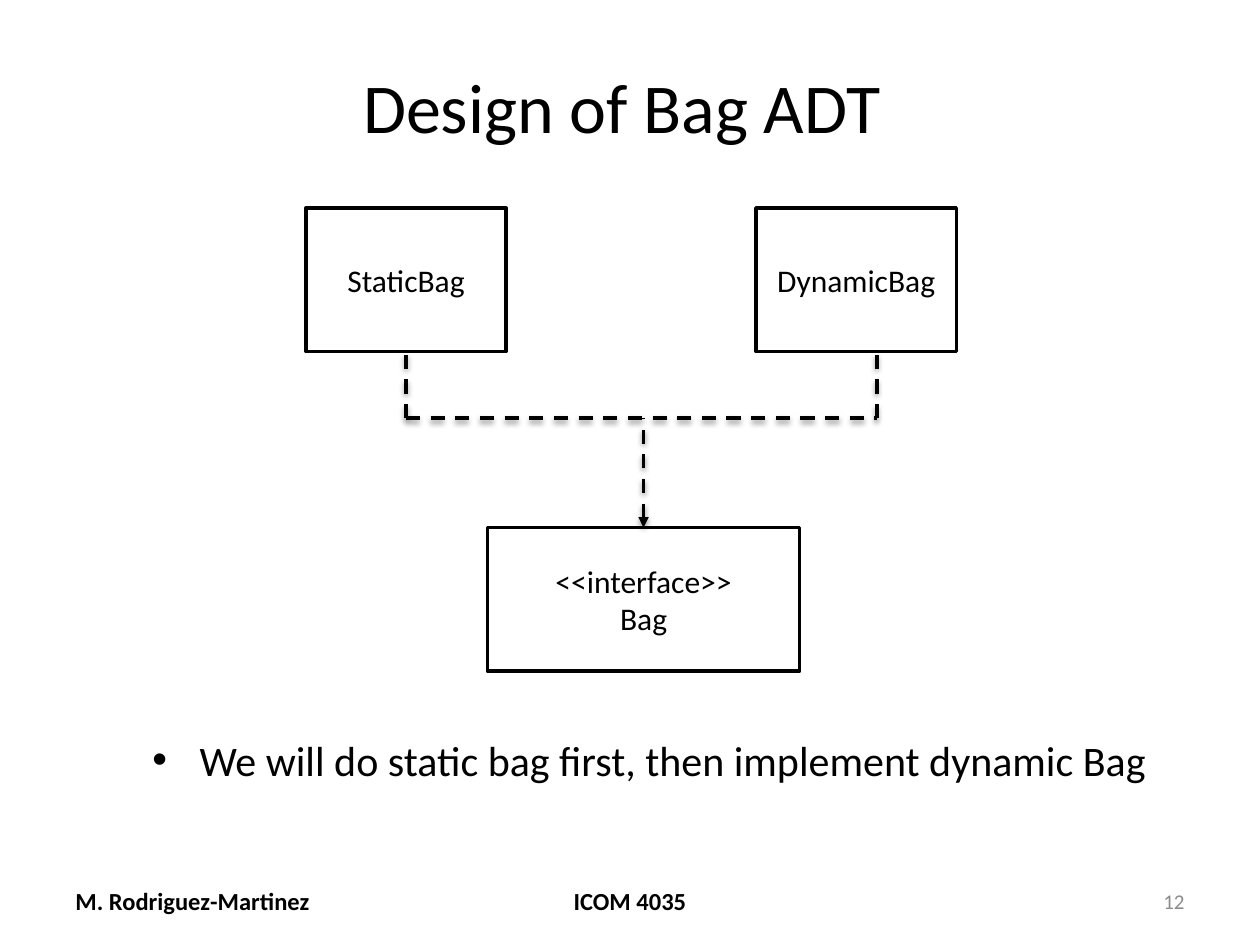
import pptx
import pptx.dml.color
import pptx.enum.dml
import pptx.enum.shapes
import pptx.enum.text
import pptx.oxml
import pptx.oxml.ns
import pptx.util
from pptx.util import Pt

ALIGN = pptx.enum.text.PP_ALIGN
ANCHOR = pptx.enum.text.MSO_ANCHOR
NS = pptx.oxml.ns.nsdecls("a")
SHADOW = (
    f'<a:effectLst {NS}><a:outerShdw blurRad="{Pt(3.1)}" dist="{Pt(1.6)}" '
    'dir="5400000" rotWithShape="0"><a:srgbClr val="000000">'
    '<a:alpha val="38000"/></a:srgbClr></a:outerShdw></a:effectLst>'
)


def rgb(value):
    return pptx.dml.color.RGBColor.from_string(value)


class Diagram:
    """Shared style and the slide being drawn; lengths are in points."""

    font = "Calibri"
    ink = "000000"
    paper = "FFFFFF"
    line_width = 2

    def __init__(self, slide):
        self.s = slide

    def run(self, p, text, size, color=None, bold=False):
        r = p.add_run()
        r.text = text
        r.font.name = self.font
        r.font.size = Pt(size)
        r.font.bold = bold
        r.font.color.rgb = rgb(color or self.ink)

    def text(self, box, text, size, align=ALIGN.LEFT, **style):
        tf = self.s.shapes.add_textbox(*map(Pt, box)).text_frame
        tf.word_wrap = True
        tf.vertical_anchor = ANCHOR.MIDDLE
        p = tf.paragraphs[0]
        p.alignment = align
        self.run(p, text, size, **style)

    def bullet(self, box, text, size, indent):
        tf = self.s.shapes.add_textbox(*map(Pt, box)).text_frame
        tf.word_wrap = False
        tf.auto_size = pptx.enum.text.MSO_AUTO_SIZE.SHAPE_TO_FIT_TEXT
        p = tf.paragraphs[0]
        pPr = p._p.get_or_add_pPr()
        pPr.set("marL", str(Pt(indent)))
        pPr.set("indent", str(-Pt(indent)))
        for xml in (f'<a:buFont {NS} typeface="Arial"/>', f'<a:buChar {NS} char="•"/>'):
            pPr.append(pptx.oxml.parse_xml(xml))
        self.run(p, text, size)

    def class_box(self, box, *lines):
        sp = self.s.shapes.add_shape(
            pptx.enum.shapes.MSO_SHAPE.RECTANGLE, *map(Pt, box))
        sp.shadow.inherit = False
        sp.fill.solid()
        sp.fill.fore_color.rgb = rgb(self.paper)
        sp.line.color.rgb = rgb(self.ink)
        sp.line.width = Pt(self.line_width)
        tf = sp.text_frame
        tf.word_wrap = True
        tf.vertical_anchor = ANCHOR.MIDDLE
        for i, line in enumerate(lines):
            p = tf.add_paragraph() if i else tf.paragraphs[0]
            p.alignment = ALIGN.CENTER
            self.run(p, line, 18)

    def dashed_line(self, x1, y1, x2, y2, arrow=False):
        """Draw a shadowed dashed line, with an optional arrowhead at its start."""
        c = self.s.shapes.add_connector(
            pptx.enum.shapes.MSO_CONNECTOR.STRAIGHT, *map(Pt, (x1, y1, x2, y2)))
        c.line.color.rgb = rgb(self.ink)
        c.line.width = Pt(self.line_width)
        c.line.dash_style = pptx.enum.dml.MSO_LINE.DASH
        if arrow:
            c.line._get_or_add_ln().append(
                pptx.oxml.parse_xml(f'<a:headEnd {NS} type="triangle"/>'))
        c._element.spPr.append(pptx.oxml.parse_xml(SHADOW))


def main():
    prs = pptx.Presentation()
    prs.slide_width, prs.slide_height = Pt(720), Pt(540)
    d = Diagram(prs.slides.add_slide(prs.slide_layouts[6]))

    d.text((36, 21.6, 648, 77), "Design of Bag ADT ", 40, ALIGN.CENTER)

    footer_top, footer_height = 500.5, 28.75
    d.text((36, footer_top, 168, footer_height), "M. Rodriguez-Martinez", 14, bold=True)
    d.text((246, footer_top, 228, footer_height), "ICOM 4035", 14, ALIGN.CENTER, bold=True)
    d.text((516, footer_top, 168, footer_height), "12", 12, ALIGN.RIGHT, color="8C8C8C")

    class_top, interface_top, box_height = 118.8, 301.5, 82
    for left, name in ((174.75, "StaticBag"), (432, "DynamicBag")):
        d.class_box((left, class_top, 114.5, box_height), name)
    d.class_box((278.5, interface_top, 178.5, box_height), "<<interface>>", "Bag")

    static_x, dynamic_x, arrow_x, join_y = 232, 501, 367.75, 239
    d.dashed_line(static_x, join_y, dynamic_x, join_y)
    for x in (static_x, dynamic_x):
        d.dashed_line(x, join_y, x, class_top + box_height)
    d.dashed_line(arrow_x, interface_top, arrow_x, join_y, arrow=True)

    d.bullet((80, 416, 590.5, 36),
             "We will do static bag first, then implement dynamic Bag", 24, 27)
    prs.save("out.pptx")


if __name__ == "__main__":
    main()
